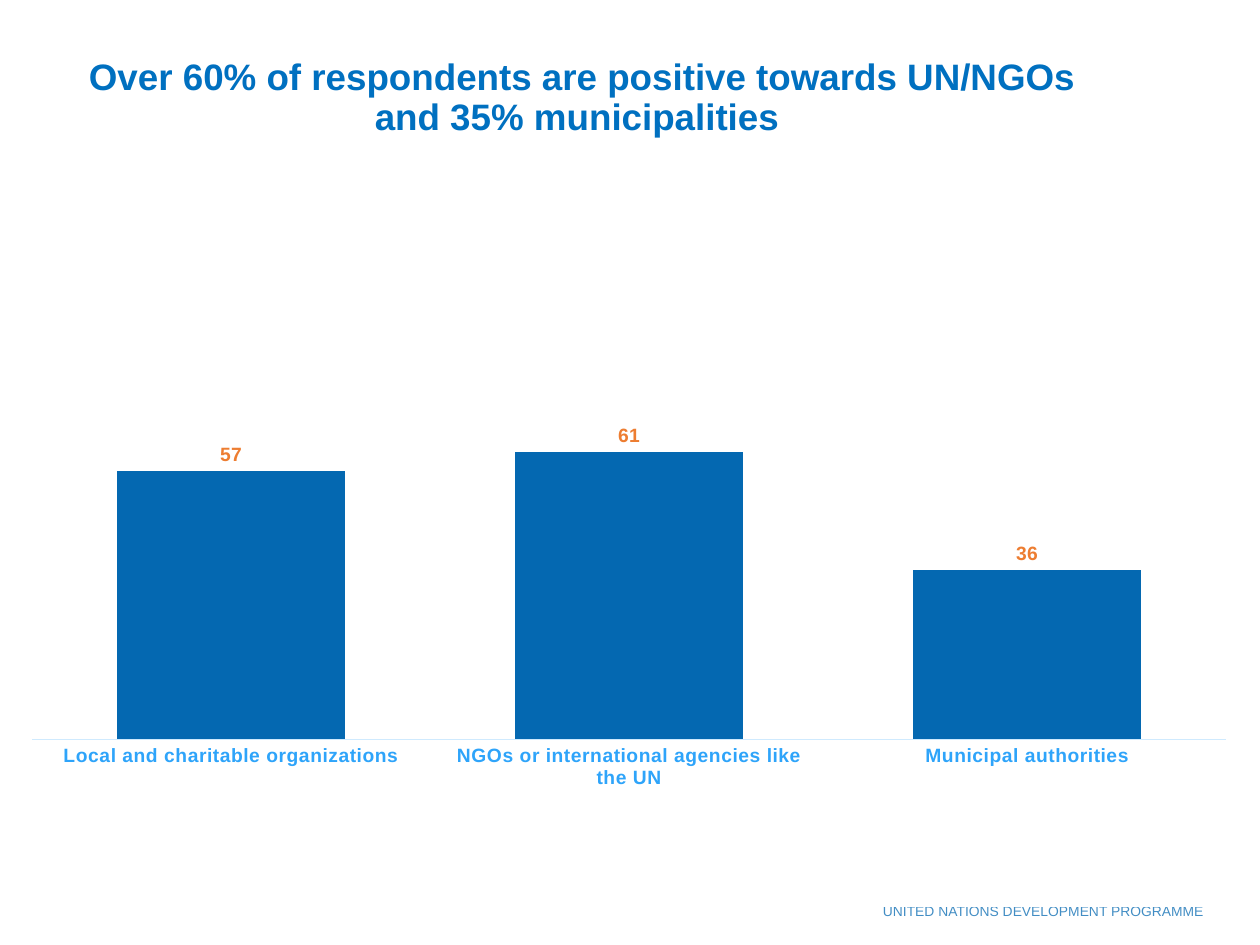
import pptx
import pptx.chart.data
import pptx.dml.color
import pptx.enum.chart
import pptx.enum.text
import pptx.oxml
import pptx.oxml.ns
import pptx.util
from lxml import etree

W, H = 10, 7.5
FONT = "Arial"
BLUE, TITLE_BLUE, SKY, PALE, ORANGE = "0468B1", "0070C0", "2EA4FA", "CFEAFE", "ED7D31"
RATINGS = {
    "Local and charitable organizations": 57,
    "NGOs or international agencies like the UN": 61,
    "Municipal authorities": 36,
}


def rgb(code):
    return pptx.dml.color.RGBColor.from_string(code)


def box(x, y, w, h):
    """Turn shares of the slide's size into lengths."""
    return [pptx.util.Inches(v) for v in (x * W, y * H, w * W, h * H)]


def style(font, size, color, bold=False):
    font.name = FONT
    font.size = pptx.util.Pt(size)
    font.bold = bold
    font.color.rgb = rgb(color)


def add_child(parent, tag, **attrs):
    el = etree.SubElement(parent, pptx.oxml.ns.qn(tag))
    for name, value in attrs.items():
        el.set(name, str(value))
    return el


def write(tf, text, align, size, color, bold=False):
    tf.word_wrap = True
    p = tf.paragraphs[0]
    p.alignment = align
    r = p.add_run()
    r.text = text
    style(r.font, size, color, bold)
    return p, r


def set_title(s, text):
    sp = s.shapes.title
    sp.left, sp.top, sp.width, sp.height = box(0.031, 0.008, 0.862, 0.145)
    tf = sp.text_frame
    tf.auto_size = pptx.enum.text.MSO_AUTO_SIZE.NONE
    tf.vertical_anchor = pptx.enum.text.MSO_ANCHOR.BOTTOM
    p, _ = write(tf, text, pptx.enum.text.PP_ALIGN.CENTER, 21, TITLE_BLUE, True)
    p.line_spacing = 0.9


def add_footer(s, text):
    tf = s.shapes.add_textbox(*box(0.641, 0.949, 0.324, 0.03)).text_frame
    _, r = write(tf, text, pptx.enum.text.PP_ALIGN.RIGHT, 7.9, BLUE)
    color = r.font._element.find(".//" + pptx.oxml.ns.qn("a:srgbClr"))
    add_child(color, "a:alpha", val=75000)


def set_plot_area(chart, x, y, w, h):
    """Fix the inner plot area, in shares of the chart's size."""
    area = chart._chartSpace.chart.plotArea
    for old in area.findall(pptx.oxml.ns.qn("c:layout")):
        area.remove(old)
    layout = etree.Element(pptx.oxml.ns.qn("c:layout"))
    manual = add_child(layout, "c:manualLayout")
    add_child(manual, "c:layoutTarget", val="inner")
    for mode in ("xMode", "yMode"):
        add_child(manual, "c:" + mode, val="edge")
    for name, share in zip("xywh", (x, y, w, h)):
        add_child(manual, "c:" + name, val=share)
    area.insert(0, layout)


def format_axes(chart):
    cat, val = chart.category_axis, chart.value_axis
    cat.major_tick_mark = pptx.enum.chart.XL_TICK_MARK.NONE
    cat.format.line.color.rgb = rgb(PALE)
    cat.format.line.width = pptx.util.Pt(0.75)
    style(cat.tick_labels.font, 11, SKY, True)
    cat.tick_labels.font._element.set("spc", "20")
    val.minimum_scale, val.maximum_scale, val.major_unit = 0, 100, 20
    val.has_major_gridlines = False
    val.visible = False


def add_column_chart(s, ratings):
    data = pptx.chart.data.CategoryChartData(number_format="#,##0")
    data.categories = list(ratings)
    data.add_series("Series 1", list(ratings.values()))
    kind = pptx.enum.chart.XL_CHART_TYPE.COLUMN_CLUSTERED
    chart = s.shapes.add_chart(kind, *box(0.011, 0.267, 0.971, 0.568), data).chart
    chart.has_legend = False
    chart.has_title = False
    style(chart.font, 10, BLUE)
    format_axes(chart)
    plot = chart.plots[0]
    plot.gap_width = 75
    plot.vary_by_categories = False
    fill = plot.series[0].format.fill
    fill.solid()
    fill.fore_color.rgb = rgb(BLUE)
    labels = plot.series[0].data_labels
    labels.show_value = True
    labels.number_format = "#,##0"
    labels.number_format_is_linked = False
    labels.position = pptx.enum.chart.XL_LABEL_POSITION.OUTSIDE_END
    style(labels.font, 11, ORANGE, True)
    set_plot_area(chart, 0.015, 0.029, 0.976, 0.88)


def main():
    prs = pptx.Presentation()
    prs.slide_width, prs.slide_height = pptx.util.Inches(W), pptx.util.Inches(H)
    s = prs.slides.add_slide(prs.slide_layouts.get_by_name("Title Only"))
    add_footer(s, "UNITED NATIONS DEVELOPMENT PROGRAMME")
    set_title(s, "Over 60% of respondents are positive towards UN/NGOs and 35% municipalities ")
    add_column_chart(s, RATINGS)
    prs.save("out.pptx")


if __name__ == "__main__":
    main()
